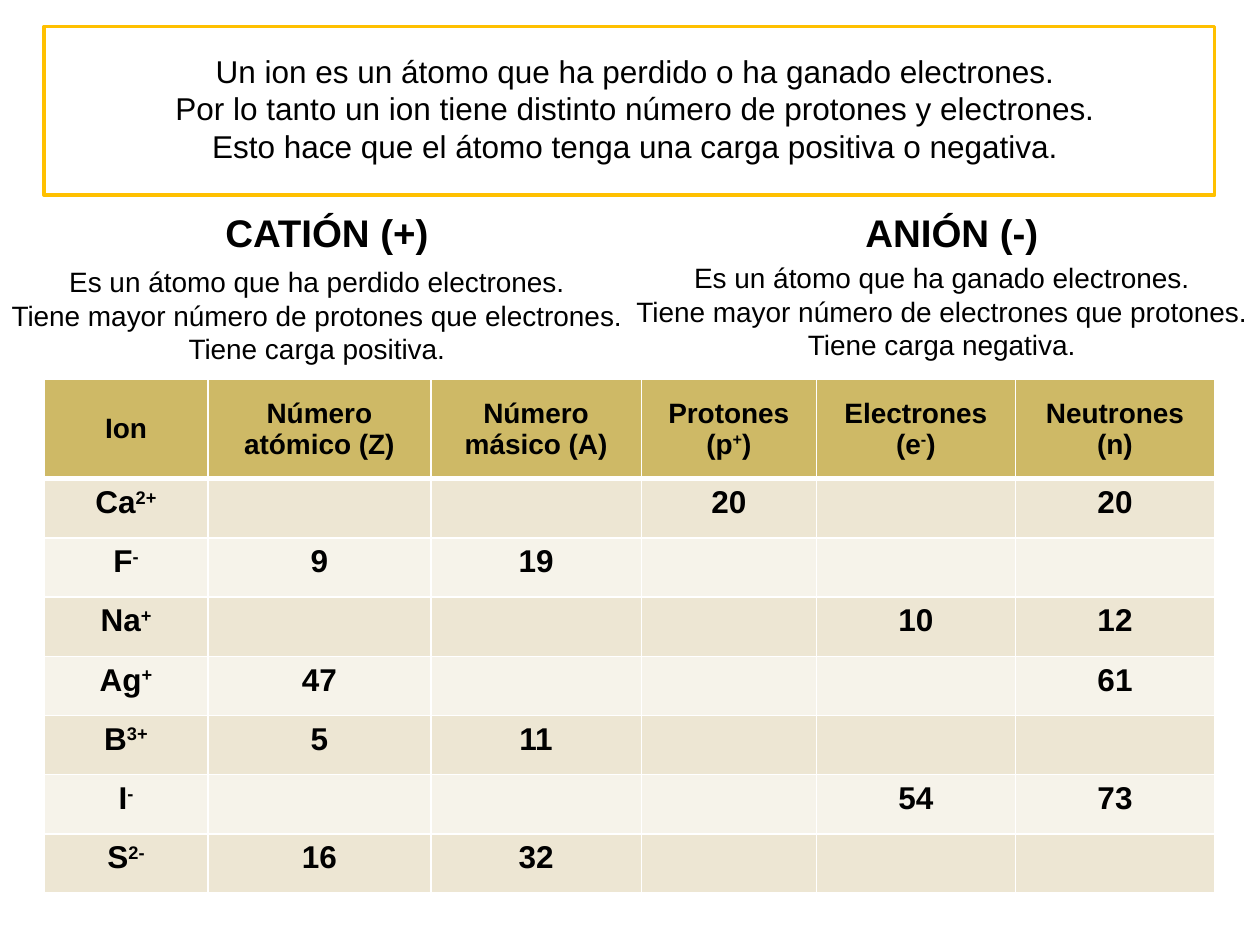
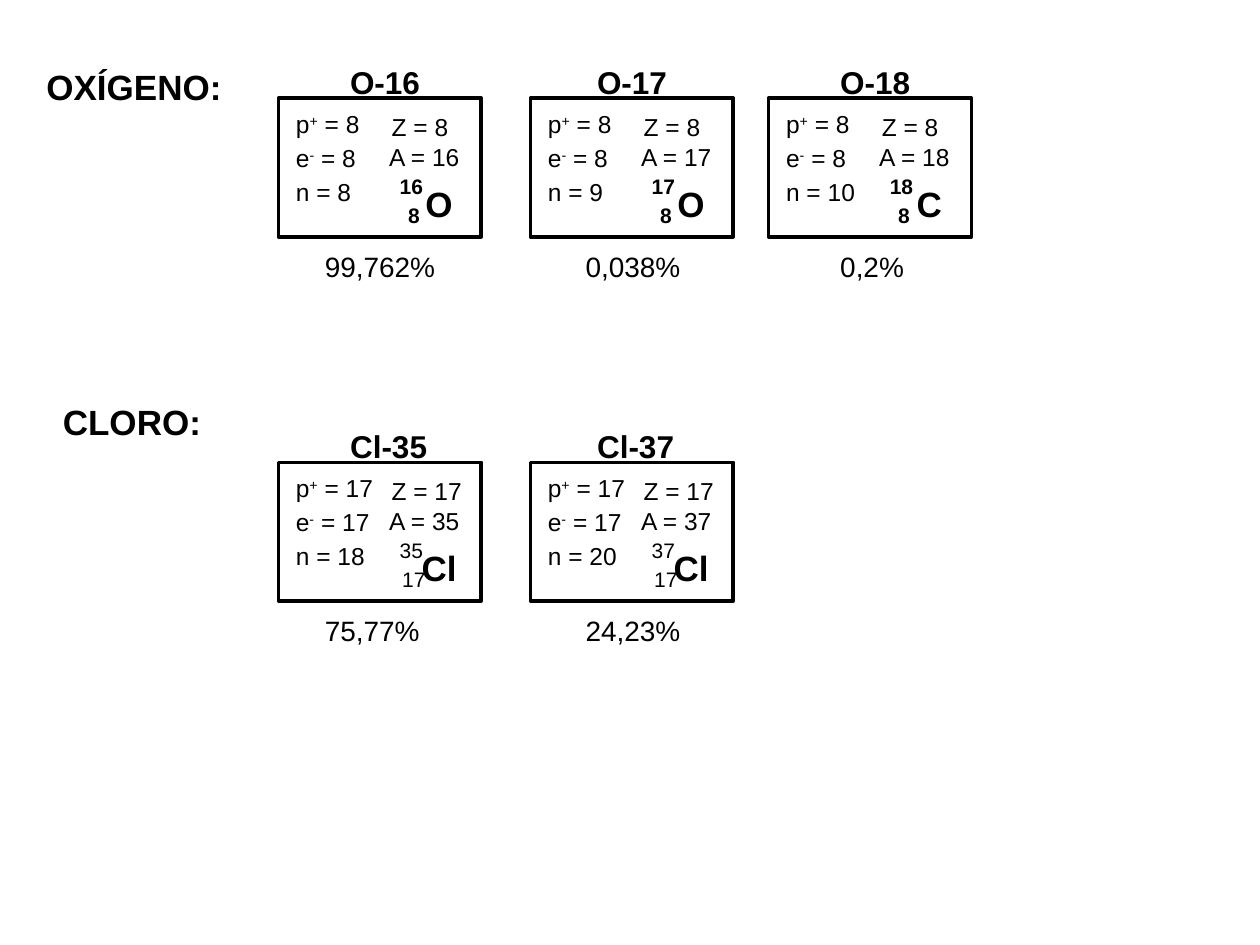
from lxml import etree
from pptx import Presentation, util as u
from pptx.dml.color import RGBColor
from pptx.enum import shapes, text
from pptx.oxml.ns import qn

COLORS = {"ink": "000000", "paper": "FFFFFF", "frame": "FFC000",
          "header": "CEB966", "odd": "EDE6D3", "even": "F6F3EA"}
FONT = "Arial"

DEFINITION = ["Un ion es un átomo que ha perdido o ha ganado electrones.",
              "Por lo tanto un ion tiene distinto número de protones y electrones.",
              "Esto hace que el átomo tenga una carga positiva o negativa."]
ION_TYPES = [
    {"title": "CATIÓN (+)", "title_at": (1.61, 1.61, 1.97, 0.47), "lines_at": (-0.2, 2.05, 5.43, 0.91),
     "lines": ["Es un átomo que ha perdido electrones.",
               "Tiene mayor número de protones que electrones.",
               "Tiene carga positiva."]},
    {"title": "ANIÓN (-)", "title_at": (6.65, 1.61, 1.81, 0.47), "lines_at": (4.76, 2.02, 5.43, 0.91),
     "lines": ["Es un átomo que ha ganado electrones.",
               "Tiene mayor número de electrones que protones.",
               "Tiene carga negativa."]},
]
# Text between carets is raised.
ION_TABLE = [
    ["Ion", "Número atómico (Z)", "Número másico (A)",
     "Protones\n(p^+^)", "Electrones\n(e^-^)", "Neutrones\n(n)"],
    ["Ca^2+^", "", "", "20", "", "20"],
    ["F^-^", "9", "19", "", "", ""],
    ["Na^+^", "", "", "", "10", "12"],
    ["Ag^+^", "47", "", "", "", "61"],
    ["B^3+^", "5", "11", "", "", ""],
    ["I^-^", "", "", "", "54", "73"],
    ["S^2-^", "16", "32", "", "", ""],
]
COLUMN_WIDTHS = [1.3, 1.77, 1.67, 1.39, 1.58, 1.58]
HEADER_HEIGHT, ROW_HEIGHT = 0.79, 0.47

ELEMENTS = [
    {"label": "OXÍGENO:", "label_at": (0.27, 0.3, 1.6, 0.61), "top": 0.78, "z": 8, "bold_numbers": True,
     "isotopes": [("O-16", "O", 16, 8, "99,762%"),
                  ("O-17", "O", 17, 9, "0,038%"),
                  ("O-18", "C", 18, 10, "0,2%")]},
    {"label": "CLORO:", "label_at": (0.4, 2.96, 1.31, 0.61), "top": 3.67, "z": 17, "bold_numbers": False,
     "isotopes": [("Cl-35", "Cl", 35, 18, "75,77%"),
                  ("Cl-37", "Cl", 37, 20, "24,23%")]},
]
ISOTOPE_COLUMNS = [{"box": 2.21, "name": 2.68, "abundance": 2.48},
                   {"box": 4.21, "name": 4.64, "abundance": 4.55},
                   {"box": 6.1, "name": 6.57, "abundance": 6.57}]


def color(name):
    return RGBColor.from_string(COLORS[name])


def write(frame, lines, size, bold=False, align=text.PP_ALIGN.CENTER, spacing=None):
    for index, line in enumerate(lines):
        paragraph = frame.paragraphs[0] if index == 0 else frame.add_paragraph()
        paragraph.alignment = align
        paragraph.line_spacing = spacing
        font = paragraph.font
        font.name, font.size, font.bold = FONT, u.Pt(size), bold
        font.color.rgb = color("ink")
        for position, part in enumerate(line.split("^")):
            if part:
                run = paragraph.add_run()
                run.text = part
                if position % 2:
                    run.font._element.set("baseline", "30000")


def add_text(parent, at, lines, size, bold=False, wrap=True, **style):
    box = parent.shapes.add_textbox(*map(u.Inches, at))
    box.text_frame.word_wrap = wrap
    box.text_frame.auto_size = text.MSO_AUTO_SIZE.SHAPE_TO_FIT_TEXT
    write(box.text_frame, lines, size, bold, **style)


def add_label(slide, at, line, size, bold=False):
    add_text(slide, at, [line], size, bold, wrap=False, align=text.PP_ALIGN.LEFT, spacing=1.5)


def add_box(slide, at, line_color):
    shape = slide.shapes.add_shape(shapes.MSO_SHAPE.RECTANGLE, *map(u.Inches, at))
    shape.shadow.inherit = False
    shape.fill.solid()
    shape.fill.fore_color.rgb = color("paper")
    shape.line.color.rgb = color(line_color)
    shape.line.width = u.Pt(2)


def set_borders(cell, widths):
    properties = cell._tc.get_or_add_tcPr()
    for index, (side, points) in enumerate(widths.items()):
        line = etree.Element(qn("a:ln" + side), w=str(u.Pt(points)))
        fill = etree.SubElement(line, qn("a:solidFill"))
        etree.SubElement(fill, qn("a:srgbClr"), val=COLORS["paper"])
        properties.insert(index, line)


def add_ion_table(slide):
    height = HEADER_HEIGHT + ROW_HEIGHT * (len(ION_TABLE) - 1)
    at = (0.35, 3.01, sum(COLUMN_WIDTHS), height)
    table = slide.shapes.add_table(len(ION_TABLE), len(COLUMN_WIDTHS), *map(u.Inches, at)).table
    for column, width in zip(table.columns, COLUMN_WIDTHS):
        column.width = u.Inches(width)
    for r, values in enumerate(ION_TABLE):
        header = r == 0
        table.rows[r].height = u.Inches(HEADER_HEIGHT if header else ROW_HEIGHT)
        for c, value in enumerate(values):
            cell = table.cell(r, c)
            cell.fill.solid()
            cell.fill.fore_color.rgb = color("header" if header else "odd" if r % 2 else "even")
            set_borders(cell, {"L": 1, "R": 1, "T": 3 if r == 1 else 1, "B": 3 if header else 1})
            if header:
                cell.vertical_anchor = text.MSO_ANCHOR.MIDDLE
            write(cell.text_frame, value.split("\n"), 16 if header else 18, bold=True)


def add_ions_slide(presentation):
    slide = presentation.slides.add_slide(presentation.slide_layouts[6])
    add_box(slide, (0.35, 0.21, 9.29, 1.34), "frame")
    add_text(slide, (0.51, 0.36, 9.06, 1.01), DEFINITION, 18)
    for ion in ION_TYPES:
        add_text(slide, ion["lines_at"], ion["lines"], 16)
        add_text(slide, ion["title_at"], [ion["title"]], 22, bold=True)
    add_ion_table(slide)


def add_isotope(slide, element, isotope, column):
    name, symbol, mass, neutrons, abundance = isotope
    left, top, z = column["box"], element["top"], element["z"]
    add_box(slide, (left, top, 1.61, 1.1), "ink")
    add_label(slide, (column["name"], top - 0.48, 0.76 + 0.06 * (len(name) - 4), 0.56), name, 18, True)
    counts = [("p^+^", z, 0.04, -0.08, 0.72), ("e^-^", z, 0.04, 0.19, 0.69),
              ("n", neutrons, 0.04, 0.46, 0.64),
              ("Z", z, 0.8, -0.06, 0.65), ("A", mass, 0.78, 0.18, 0.65)]
    for quantity, value, x, y, width in counts:
        width += 0.11 * (len(str(value)) - 1)
        add_label(slide, (left + x, top + y, width, 0.45), f"{quantity} = {value}", 14)
    notation = slide.shapes.add_group_shape()
    add_text(notation, (left + 0.69, top + 0.62, 1.17, 0.44), [symbol], 20, True)
    for number, x, y in [(z, 0.77, 0.78), (mass, 0.75, 0.55)]:
        add_text(notation, (left + x, top + y, 0.61, 0.3), [str(number)], 12, element["bold_numbers"])
    width = 0.71 + 0.125 * (len(abundance) - 4)
    add_label(slide, (column["abundance"], top + 1.02, width, 0.45), abundance, 16)


def add_isotopes_slide(presentation):
    slide = presentation.slides.add_slide(presentation.slide_layouts[6])
    for element in ELEMENTS:
        add_label(slide, element["label_at"], element["label"], 20, True)
        for isotope, column in zip(element["isotopes"], ISOTOPE_COLUMNS):
            add_isotope(slide, element, isotope, column)


def main():
    presentation = Presentation()
    presentation.slide_width, presentation.slide_height = u.Inches(10), u.Inches(7.5)
    add_ions_slide(presentation)
    add_isotopes_slide(presentation)
    presentation.save("out.pptx")


if __name__ == "__main__":
    main()
